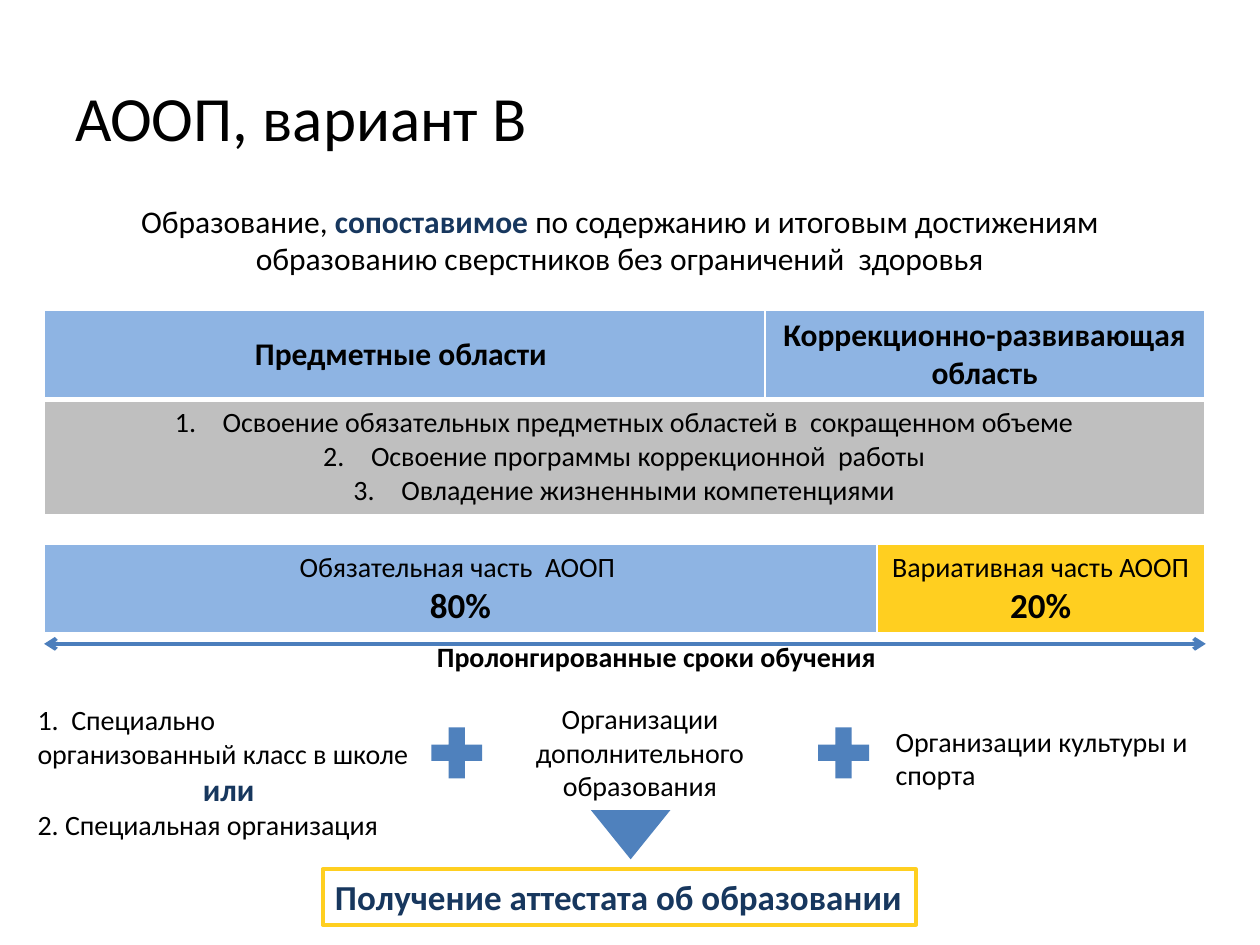
from lxml.etree import SubElement
from pptx import Presentation
from pptx.dml.color import RGBColor
from pptx.enum.shapes import MSO_CONNECTOR as Connector, MSO_SHAPE as Shape
from pptx.enum.text import MSO_ANCHOR as Anchor, MSO_AUTO_SIZE as AutoSize, PP_ALIGN as Align
from pptx.oxml import parse_xml
from pptx.oxml.ns import nsdecls, qn
from pptx.util import Inches, Pt

BLACK = RGBColor(0x00, 0x00, 0x00)
NAVY = RGBColor(0x17, 0x37, 0x5E)
BLUE = RGBColor(0x4F, 0x81, 0xBD)
ARROW_BLUE = RGBColor(0x4B, 0x7E, 0xBC)
LIGHT_BLUE = RGBColor(0x8E, 0xB4, 0xE3)
GRAY = RGBColor(0xBF, 0xBF, 0xBF)
YELLOW = RGBColor(0xFF, 0xCF, 0x20)


def apply(target, values):
    for name, value in values.items():
        setattr(target, name, value)


def run(text, size=16, bold=False, color=BLACK):
    return text, {"size": Pt(size), "bold": bold}, color


def para(*runs, hanging=False, numbered=False, **values):
    return runs, hanging, numbered, values


class SlideBuilder:
    font = "Calibri"
    hanging_indent = Inches(0.38)

    def __init__(self, slide):
        self.slide = slide

    def fill_text(self, frame, paragraphs):
        for index, (runs, hanging, numbered, values) in enumerate(paragraphs):
            paragraph = frame.add_paragraph() if index else frame.paragraphs[0]
            apply(paragraph, values)
            if hanging:
                props = paragraph._p.get_or_add_pPr()
                props.set("marL", str(self.hanging_indent))
                props.set("indent", str(-self.hanging_indent))
                if numbered:
                    SubElement(props, qn("a:buFont"), typeface="+mj-lt")
                    SubElement(props, qn("a:buAutoNum"), type="arabicPeriod")
            for text, font_values, color in runs:
                piece = paragraph.add_run()
                piece.text = text
                apply(piece.font, {"name": self.font, **font_values})
                piece.font.color.rgb = color

    def text(self, box, *paragraphs, **values):
        frame = self.slide.shapes.add_textbox(*map(Inches, box)).text_frame
        apply(frame, {"word_wrap": True, "auto_size": AutoSize.NONE, **values})
        self.fill_text(frame, paragraphs)

    def shape(self, kind, box, fill=None, line=None, rotation=0):
        shape = self.slide.shapes.add_shape(kind, *map(Inches, box))
        shape.shadow.inherit = False
        shape.rotation = rotation
        if fill:
            shape.fill.solid()
            shape.fill.fore_color.rgb = fill
        else:
            shape.fill.background()
        if line:
            shape.line.color.rgb = line
            shape.line.width = Pt(2.25)
        else:
            shape.line.fill.background()
        return shape

    def double_arrow(self, start, end, color):
        arrow = self.slide.shapes.add_connector(
            Connector.STRAIGHT, *map(Inches, start + end))
        arrow.line.color.rgb = color
        arrow.line.width = Pt(2.25)
        line = arrow.line._get_or_add_ln()
        for tag in ("a:headEnd", "a:tailEnd"):
            SubElement(line, qn(tag), type="arrow")
        SubElement(arrow._element.spPr, qn("a:effectLst"))

    def table(self, left, top, widths, heights):
        table = self.slide.shapes.add_table(
            len(heights), len(widths), Inches(left), Inches(top),
            Inches(sum(widths)), Inches(sum(heights))).table
        for column, width in zip(table.columns, widths):
            column.width = Inches(width)
        for row, height in zip(table.rows, heights):
            row.height = Inches(height)
        return table

    def cell(self, cell, fill, *paragraphs, bottom=3, anchor=Anchor.TOP):
        cell.vertical_anchor = anchor
        cell.fill.solid()
        cell.fill.fore_color.rgb = fill
        widths = {"lnL": 1, "lnR": 1, "lnT": 1, "lnB": bottom}
        for index, (tag, width) in enumerate(widths.items()):
            cell._tc.get_or_add_tcPr().insert(index, parse_xml(
                f'<a:{tag} {nsdecls("a")} w="{Pt(width)}"><a:solidFill>'
                f'<a:srgbClr val="FFFFFF"/></a:solidFill></a:{tag}>'))
        self.fill_text(cell.text_frame, paragraphs)


def main():
    prs = Presentation()
    prs.slide_width, prs.slide_height = Inches(10), Inches(7.5)
    page = SlideBuilder(prs.slides.add_slide(prs.slide_layouts[6]))
    center = {"alignment": Align.CENTER}

    # Title and introduction
    page.text((0.5, 0.3, 9, 1.25), para(run("АООП, вариант B", 36)),
              vertical_anchor=Anchor.MIDDLE)
    page.text((0.67, 1.55, 8.5, 0.71), para(
        run("Образование, ", 18), run("сопоставимое ", 18, True, NAVY),
        run("по содержанию и итоговым достижениям образованию сверстников "
            "без ограничений  здоровья", 18),
        space_before=Pt(6), **center))

    # Subject areas and goals
    areas = page.table(0.35, 2.46, (5.72, 3.49), (0.7, 0.9))
    headings = ("Предметные области ", "Коррекционно-развивающая область")
    for column, heading in enumerate(headings):
        page.cell(areas.cell(0, column), LIGHT_BLUE,
                  para(run(heading, 18, True), **center),
                  anchor=Anchor.TOP if column else Anchor.MIDDLE)
    goals = ("Освоение обязательных предметных областей в  сокращенном объеме",
             "Освоение программы коррекционной  работы",
             "Овладение жизненными компетенциями")
    areas.cell(1, 0).merge(areas.cell(1, 1))
    page.cell(areas.cell(1, 0), GRAY, *(
        para(run(goal), hanging=True, numbered=True, **center)
        for goal in goals), bottom=1)

    # Programme shares
    shares = page.table(0.35, 4.32, (6.61, 2.6), (0.7,))
    parts = (("Обязательная часть  АООП ", "80%", LIGHT_BLUE),
             ("Вариативная часть АООП", "20%", YELLOW))
    for column, (part, share, fill) in enumerate(parts):
        page.cell(shares.cell(0, column), fill, para(run(part), **center),
                  para(run(share, 20, True), **center))

    # Study period
    page.double_arrow((0.35, 5.11), (9.57, 5.11), ARROW_BLUE)
    page.text((3.37, 5.03, 3.73, 0.37),
              para(run("Пролонгированные сроки обучения", bold=True)), word_wrap=False)

    # Organisations joined by plus signs
    page.text((0.2, 5.53, 3.23, 1.21),
              para(run("1.  Специально  организованный класс в школе")),
              para(run("или", 18, True, NAVY), hanging=True, **center),
              para(run("2. Специальная организация"), hanging=True))
    page.text((3.9, 5.52, 2.36, 0.91),
              para(run("Организации дополнительного образования"), **center))
    page.text((7.01, 5.7, 2.8, 0.64), para(run("Организации культуры и спорта")))
    for plus_left in (3.35, 6.42):
        page.shape(Shape.MATH_PLUS, (plus_left, 5.7, 0.55, 0.55), BLUE)

    # Outcome
    page.shape(Shape.ISOSCELES_TRIANGLE, (4.69, 6.43, 0.63, 0.39), BLUE, rotation=180)
    certificate = page.shape(Shape.RECTANGLE, (2.56, 6.9, 4.71, 0.44), line=YELLOW)
    apply(certificate.text_frame, {"word_wrap": False, "vertical_anchor": Anchor.TOP})
    page.fill_text(certificate.text_frame, [
        para(run("Получение аттестата об образовании", 20, True, NAVY),
             alignment=Align.LEFT, space_before=Pt(6))])

    prs.save("out.pptx")


if __name__ == "__main__":
    main()
